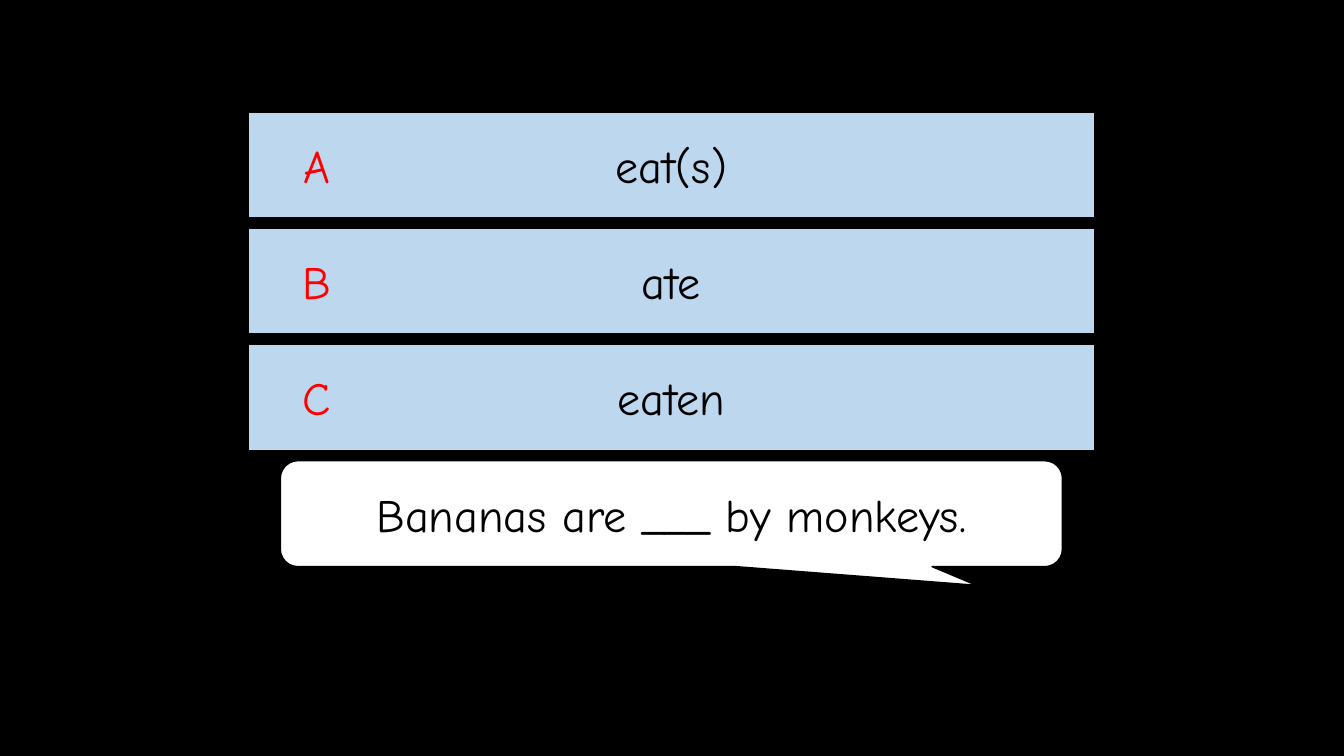
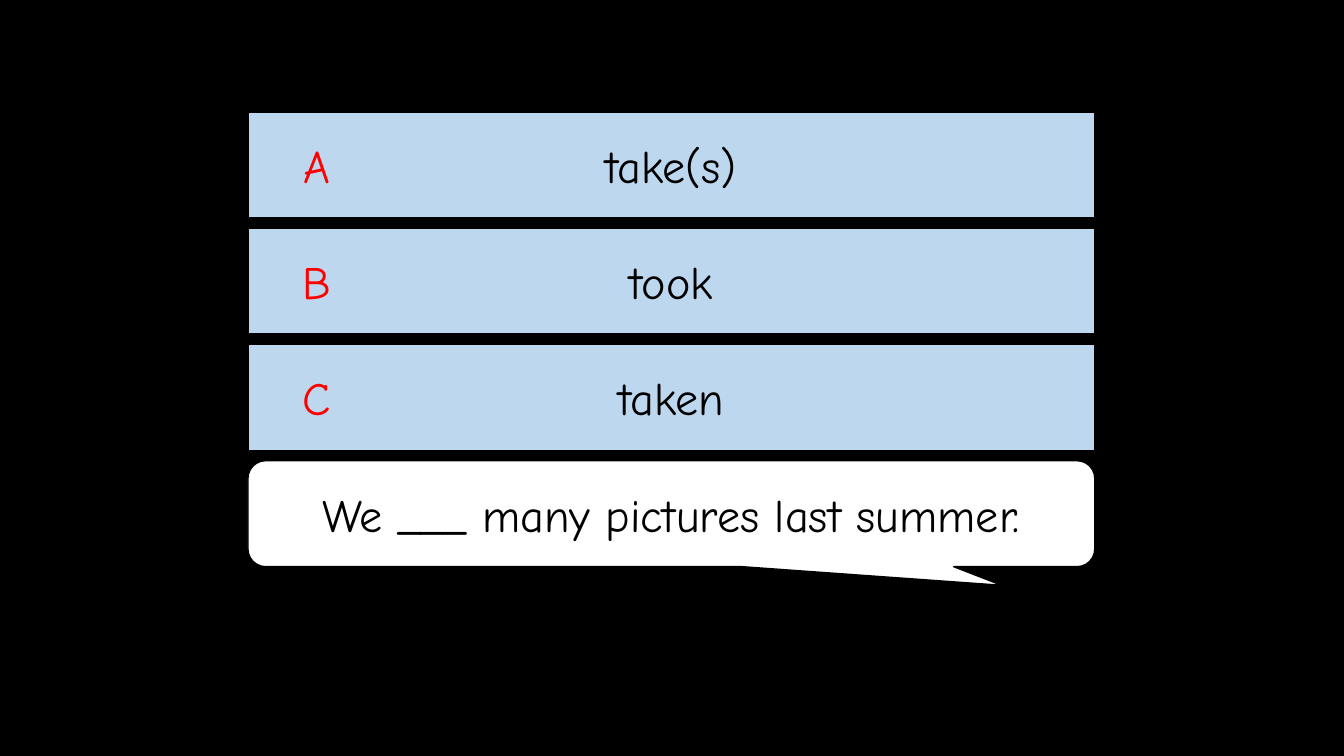
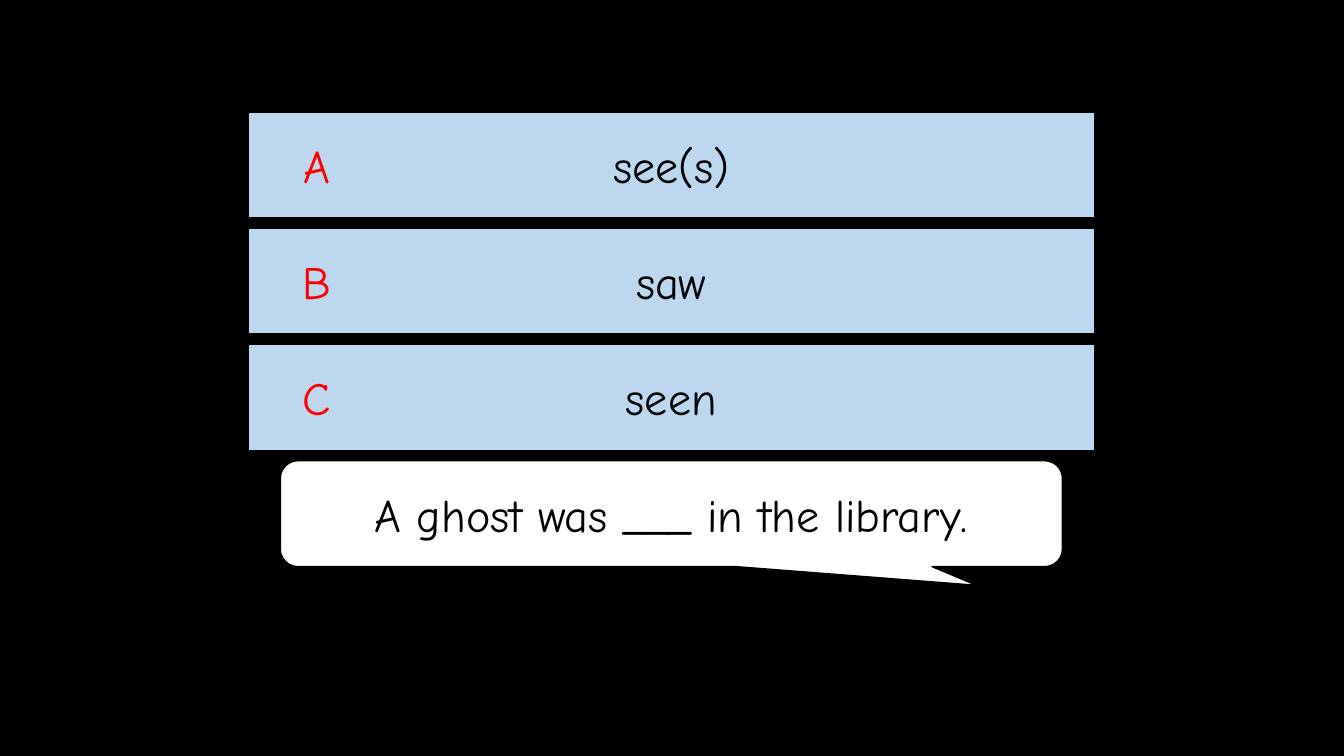
from pptx import Presentation
from pptx import util as u
from pptx.dml.color import RGBColor
from pptx.enum import shapes, text

COLORS = {"black": "000000", "white": "FFFFFF", "answer": "BDD7EE", "letter": "FF0000"}
FONT = "Comic Neue"
FONT_SIZE = 33

# Layout in centimetres
CENTER = 16.92
TOP = 2.82
BAR_WIDTH, BAR_HEIGHT, PITCH = 21.34, 2.67, 2.93
LETTER_LEFT, LETTER_WIDTH, LETTER_HEIGHT = 6.86, 2.26, 1.85
NARROW_BUBBLE = 19.71
BUBBLE_ADJUSTMENTS = (0.39, 0.676, 0.167)

# Sentence, bubble width, answers
QUESTIONS = [
    ("Bananas are ___ by monkeys.", NARROW_BUBBLE, ("eat(s)", "ate", "eaten")),
    ("We ___ many pictures last summer.", BAR_WIDTH, ("take(s)", "took", "taken")),
    ("A ghost was ___ in the library.", NARROW_BUBBLE, ("see(s)", "saw", "seen")),
]


def color(name):
    return RGBColor.from_string(COLORS[name])


class Quiz:
    """Holds the deck, its style and the current page."""

    def __init__(self):
        self.deck = Presentation()
        self.deck.slide_width, self.deck.slide_height = u.Cm(33.87), u.Cm(19.05)
        backdrop = self.deck.slide_master.background.fill
        backdrop.solid()
        backdrop.fore_color.rgb = color("black")
        self.page = None

    def new_page(self):
        self.page = self.deck.slides.add_slide(self.deck.slide_layouts[6])

    def add_words(self, box, words, ink="black"):
        frame = box.text_frame
        frame.word_wrap = True
        frame.vertical_anchor = text.MSO_ANCHOR.MIDDLE
        para = frame.paragraphs[0]
        para.alignment = text.PP_ALIGN.CENTER
        span = para.add_run()
        span.text = words
        span.font.name = FONT
        span.font.size = u.Pt(FONT_SIZE)
        span.font.color.rgb = color(ink)

    def panel(self, kind, row, width, fill, words):
        """Draw a centred, filled shape on the given row."""
        box = self.page.shapes.add_shape(
            kind, u.Cm(CENTER - width / 2), u.Cm(TOP + row * PITCH),
            u.Cm(width), u.Cm(BAR_HEIGHT))
        box.shadow.inherit = False
        box.fill.solid()
        box.fill.fore_color.rgb = color(fill)
        box.line.color.rgb = color("black")
        box.line.width = u.Pt(1)
        self.add_words(box, words)
        return box

    def bubble(self, row, width, words):
        box = self.panel(shapes.MSO_SHAPE.ROUNDED_RECTANGULAR_CALLOUT,
                         row, width, "white", words)
        for index, value in enumerate(BUBBLE_ADJUSTMENTS):
            box.adjustments[index] = value

    def answer(self, row, words):
        self.panel(shapes.MSO_SHAPE.RECTANGLE, row, BAR_WIDTH, "answer", words)

    def letter(self, row, words):
        top = TOP + row * PITCH + (BAR_HEIGHT - LETTER_HEIGHT) / 2
        box = self.page.shapes.add_textbox(
            u.Cm(LETTER_LEFT), u.Cm(top), u.Cm(LETTER_WIDTH), u.Cm(LETTER_HEIGHT))
        self.add_words(box, words, "letter")


def main():
    quiz = Quiz()
    for sentence, width, answers in QUESTIONS:
        quiz.new_page()
        # The sentence sits on the row below the answers
        quiz.bubble(len(answers), width, sentence)
        for row, words in enumerate(answers):
            quiz.answer(row, words)
        for row, name in enumerate("ABC"):
            quiz.letter(row, name)
    quiz.deck.save("out.pptx")


if __name__ == "__main__":
    main()
